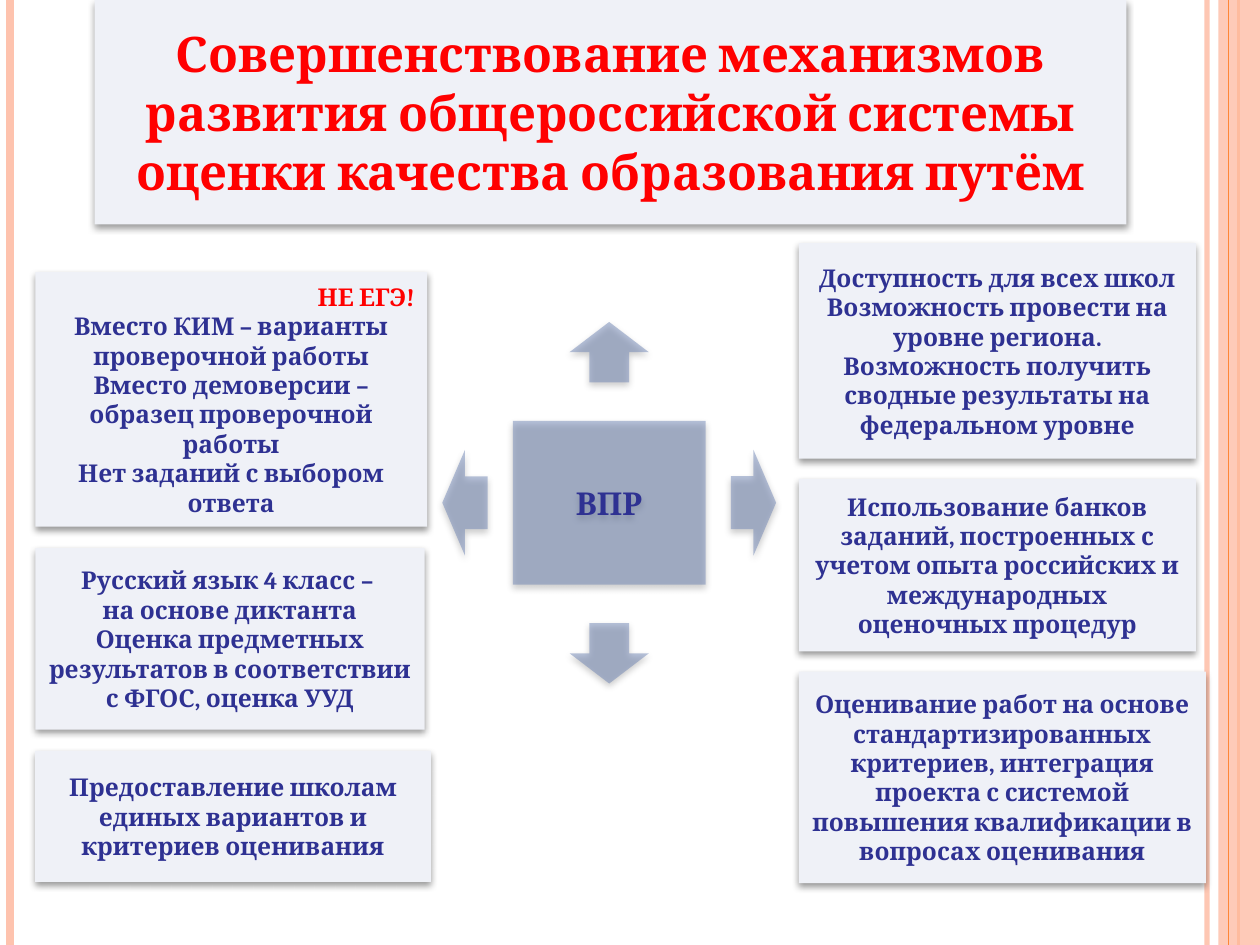
from dataclasses import dataclass
from lxml.etree import SubElement
from pptx import Presentation
from pptx.dml.color import RGBColor as RGB
from pptx.enum.shapes import MSO_CONNECTOR as CONN, MSO_SHAPE as SHAPE
from pptx.enum.text import MSO_ANCHOR as ANCHOR, PP_ALIGN as ALIGN
from pptx.oxml.ns import qn
from pptx.util import Inches, Pt

COLS, ROWS = 100, 75
WIDTH, HEIGHT = Inches(10), Inches(7.5)


@dataclass(frozen=True)
class Theme:
    font: str = "Cambria"
    card: str = "EFF1F7"
    hub: str = "6E84B4"
    text: str = "2E3192"
    accent: str = "FF0000"
    peach: str = "FEC3AE"
    orange: str = "FE8637"
    shadow: str = "000000"
    title_size: int = 28
    hub_size: int = 18
    body_size: int = 14


@dataclass(frozen=True)
class Box:
    x: float
    y: float
    w: float
    h: float

    def emu(self):
        return (round(self.x * WIDTH / COLS), round(self.y * HEIGHT / ROWS),
                round(self.w * WIDTH / COLS), round(self.h * HEIGHT / ROWS))

    def centred(self, dx, dy, w, h):
        return Box(self.x + self.w / 2 + dx - w / 2,
                   self.y + self.h / 2 + dy - h / 2, w, h)


T = Theme()


def set_alpha(parent, percent):
    clr = next(parent.iter(qn("a:srgbClr")))
    SubElement(clr, qn("a:alpha"), val=str(percent * 1000))


def add_shadow(sp):
    effects = sp._element.spPr.find(qn("a:effectLst"))
    outer = SubElement(effects, qn("a:outerShdw"), blurRad=str(Pt(4)),
                       dist=str(Pt(2)), dir="5400000", rotWithShape="0")
    SubElement(outer, qn("a:srgbClr"), val=T.shadow)
    set_alpha(outer, 40)


def add_block(s, kind, box, color, alpha=None, shadow=True):
    sp = s.shapes.add_shape(kind, *box.emu())
    sp.shadow.inherit = False
    sp.line.fill.background()
    sp.fill.solid()
    sp.fill.fore_color.rgb = RGB.from_string(color)
    if alpha:
        set_alpha(sp._element.spPr.find(qn("a:solidFill")), alpha)
    if shadow:
        add_shadow(sp)
    return sp


def add_panel(s, box, lines, size, color, fill=T.card, alpha=None):
    sp = add_block(s, SHAPE.ROUNDED_RECTANGLE, box, fill, alpha)
    sp.adjustments[0] = 0
    tf = sp.text_frame
    tf.word_wrap = True
    tf.vertical_anchor = ANCHOR.MIDDLE
    tf.text = "\n".join(lines)
    for p in tf.paragraphs:
        p.alignment = ALIGN.CENTER
        for r in p.runs:
            r.font.name, r.font.size, r.font.bold = T.font, Pt(size), True
            r.font.color.rgb = RGB.from_string(color)
    return tf


def add_rule(s, box, x, color, width, alpha=None):
    x, y, _, h = Box(box.x + x, box.y, 0, box.h).emu()
    ln = s.shapes.add_connector(CONN.STRAIGHT, x, y, x, y + h)
    ln.line.color.rgb = RGB.from_string(color)
    ln.line.width = Pt(width)
    if alpha:
        set_alpha(ln.line._ln, alpha)
    SubElement(ln._element.spPr, qn("a:effectLst"))


def draw_frame(s, box):
    add_rule(s, box, 95.8, T.peach, 3, 93)
    add_rule(s, box, 0.8, T.peach, 4.5)
    add_rule(s, box, 98.3, T.orange, 1.5)
    band = Box(box.x + 96.7, box.y, box.w - 96.7, box.h)
    add_block(s, SHAPE.RECTANGLE, band, T.peach, 87, shadow=False)
    add_rule(s, box, 97.5, T.orange, 0.75)


def draw_title(s, box, text):
    add_panel(s, box, [text], T.title_size, T.accent)


def draw_cards(s, box, cards):
    gap = (box.h - sum(h for _, h, _ in cards)) / (len(cards) - 1)
    y = box.y
    frames = []
    for w, h, lines in cards:
        frames.append(add_panel(s, Box(box.x, y, w, h), lines, T.body_size, T.text))
        y += h + gap
    return frames


def draw_hub(s, box, text):
    add_panel(s, box.centred(0, 0, 15.3, 13), [text], T.hub_size, T.text, T.hub, 49)
    across, along = (3.6, 8.4), (4.8, 6.3)
    arrows = [(11.45, 0, across, 0), (0, -11.95, along, 270),
              (0, 11.95, along, 90), (-11.45, 0, across, 180)]
    for dx, dy, (w, h), turn in arrows:
        sp = add_block(s, SHAPE.RIGHT_ARROW, box.centred(dx, dy, w, h), T.hub, 49)
        sp.rotation = turn


LEFT_CARDS = [
    (31.1, 20.2, ["НЕ ЕГЭ!",
                  "Вместо КИМ – варианты проверочной работы",
                  "Вместо демоверсии – образец проверочной работы",
                  "Нет заданий с выбором ответа"]),
    (30.9, 14.4, ["Русский язык 4 класс – \vна основе диктанта",
                  "Оценка предметных результатов в соответствии с ФГОС, оценка УУД"]),
    (31.4, 10.4, ["Предоставление школам единых вариантов и критериев оценивания"]),
]
RIGHT_CARDS = [
    (31.5, 17.1, ["Доступность для всех школ",
                  "Возможность провести на уровне региона. Возможность получить "
                  "сводные результаты на федеральном уровне"]),
    (31.5, 13.7, ["Использование банков заданий, построенных с учетом опыта "
                  "российских и международных оценочных процедур"]),
    (32.3, 16.8, ["Оценивание работ на основе стандартизированных критериев, "
                  "интеграция проекта с системой повышения квалификации в "
                  "вопросах оценивания"]),
]


def main():
    prs = Presentation()
    prs.slide_width, prs.slide_height = WIDTH, HEIGHT
    s = prs.slides.add_slide(prs.slide_layouts[6])
    draw_frame(s, Box(0, 0, COLS, ROWS))
    draw_hub(s, Box(35.1, 24.8, 26.5, 30.2), "ВПР")
    left = draw_cards(s, Box(2.8, 21.6, 31.4, 48.4), LEFT_CARDS)
    note = left[0].paragraphs[0]
    note.alignment = ALIGN.RIGHT
    note.runs[0].font.color.rgb = RGB.from_string(T.accent)
    draw_cards(s, Box(63.4, 19.3, 32.3, 50.8), RIGHT_CARDS)
    draw_title(s, Box(7.5, 0, 81.9, 17.8),
               "Совершенствование механизмов развития общероссийской "
               "системы оценки качества образования путём")
    prs.save("out.pptx")


if __name__ == "__main__":
    main()
